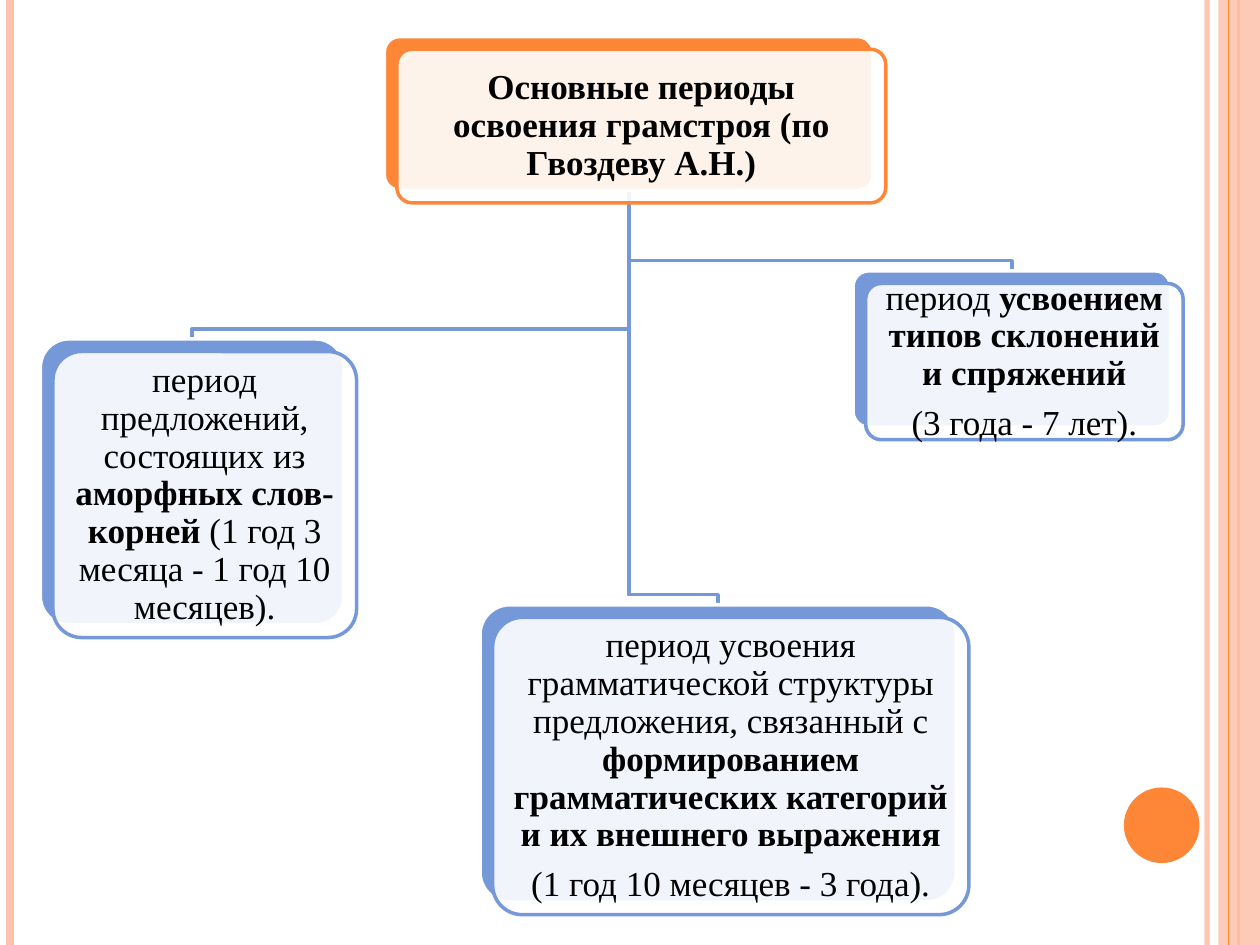
"""Build a slide with a tree of the periods of grammar acquisition."""
import pptx
import pptx.dml.color
import pptx.enum.shapes
import pptx.enum.text
import pptx.oxml
import pptx.oxml.ns
import pptx.util

Inches = pptx.util.Inches
Pt = pptx.util.Pt
SHAPE = pptx.enum.shapes.MSO_SHAPE

COLORS = {
    "orange": "FE8637",
    "peach": "FEC3AE",
    "blue": "7598D9",
    "white": "FFFFFF",
    "black": "000000",
}
CARD_SHIFT = 0.1
ELBOW_DROP = 0.08
TRUNK = (4.99, 1.51)

TITLE = ((3.05, 0.29, 3.88, 1.22),
         [[("Основные периоды освоения грамстроя (по Гвоздеву А.Н.)", True)]])
PERIODS = [
    ((0.32, 2.69, 2.41, 2.27), 0, [
        [("период предложений, состоящих из ", False),
         ("аморфных слов-корней ", True),
         ("(1 год 3 месяца - 1 год 10 месяцев).", False)],
    ]),
    ((3.81, 4.8, 3.78, 2.36), -0.33, [
        [("период усвоения грамматической структуры предложения, связанный с ", False),
         ("формированием грамматических категорий и их внешнего выражения", True)],
        [("(1 год 10 месяцев - 3 года).", False)],
    ]),
    ((6.77, 2.15, 2.52, 1.24), 0, [
        [("период ", False), ("усвоением типов склонений и спряжений", True)],
        [("(3 года - 7 лет).", False)],
    ]),
]


def rgb(name):
    """Return the named colour."""
    return pptx.dml.color.RGBColor.from_string(COLORS[name])


def set_alpha(fill_format, percent):
    """Make a solid fill partly transparent."""
    color = fill_format._xPr.find(".//" + pptx.oxml.ns.qn("a:srgbClr"))
    alpha = pptx.oxml.parse_xml(
        f'<a:alpha {pptx.oxml.ns.nsdecls("a")} val="{percent * 1000}"/>')
    color.append(alpha)


def add_line(s, x, color, width, alpha=100):
    """Draw a full-height vertical stripe."""
    sp = s.shapes.add_connector(pptx.enum.shapes.MSO_CONNECTOR.STRAIGHT,
                                Inches(x), 0, Inches(x), Inches(7.5))
    sp.line.color.rgb = rgb(color)
    sp.line.width = Pt(width)
    if alpha < 100:
        set_alpha(sp.line.fill, alpha)
    pptx.oxml.ns.qn("a:effectLst")
    sp._element.spPr.append(
        pptx.oxml.parse_xml(f'<a:effectLst {pptx.oxml.ns.nsdecls("a")}/>'))


def add_shape(s, kind, box, fill, line=None, alpha=100):
    """Add a filled preset shape without a shadow."""
    sp = s.shapes.add_shape(kind, *map(Inches, box))
    sp.shadow.inherit = False
    sp.fill.solid()
    sp.fill.fore_color.rgb = rgb(fill)
    if alpha < 100:
        set_alpha(sp.fill, alpha)
    if line:
        sp.line.color.rgb = rgb(line)
        sp.line.width = Pt(2)
    else:
        sp.line.fill.background()
    return sp


def add_text(sp, paragraphs, size=20, font="Times New Roman", color="black", last_indent=0):
    """Write centred paragraphs of (text, bold) runs into a shape."""
    tf = sp.text_frame
    tf.word_wrap = True
    tf.vertical_anchor = pptx.enum.text.MSO_ANCHOR.MIDDLE
    tf.margin_left = tf.margin_right = tf.margin_top = tf.margin_bottom = Inches(0.08)
    for i, runs in enumerate(paragraphs):
        p = tf.add_paragraph() if i else tf.paragraphs[0]
        p.alignment = pptx.enum.text.PP_ALIGN.CENTER
        p.line_spacing = 0.9
        p.space_after = Pt(0.35 * size)
        for text, bold in runs:
            r = p.add_run()
            r.text = text
            r.font.size = Pt(size)
            r.font.name = font
            r.font.bold = bold
            r.font.color.rgb = rgb(color)
    if last_indent:
        p._p.get_or_add_pPr().set("indent", str(Inches(last_indent)))


def add_card(s, box, paragraphs, color, last_indent=0):
    """Add a solid back plate and a shifted translucent card with text."""
    x, y, w, h = box
    front_box = (x + CARD_SHIFT, y + CARD_SHIFT, w, h)
    back = add_shape(s, SHAPE.ROUNDED_RECTANGLE, box, color, "white")
    front = add_shape(s, SHAPE.ROUNDED_RECTANGLE, front_box, "white", color, 90)
    for sp in (back, front):
        sp.adjustments[0] = 0.1
    add_text(front, paragraphs, last_indent=last_indent)


def add_elbow(s, box):
    """Draw the branch from the title down to the top of a card."""
    x, y, w, _ = box
    end_x, bend_y = x + w / 2, y - ELBOW_DROP
    points = [(TRUNK[0], bend_y), (end_x, bend_y), (end_x, y)]
    builder = s.shapes.build_freeform(*map(Inches, TRUNK))
    builder.add_line_segments([(Inches(px), Inches(py)) for px, py in points], close=False)
    sp = builder.convert_to_shape()
    sp.shadow.inherit = False
    sp.fill.background()
    sp.line.color.rgb = rgb("blue")
    sp.line.width = Pt(2)


def add_decoration(s):
    """Add the edge stripes and the orange dot."""
    add_line(s, 9.58, "peach", 3, 93)
    add_line(s, 0.08, "peach", 4.5)
    add_line(s, 9.83, "orange", 1.5)
    add_shape(s, SHAPE.RECTANGLE, (9.67, 0, 0.33, 7.5), "peach", alpha=87)
    add_line(s, 9.75, "orange", 0.75)
    add_shape(s, SHAPE.OVAL, (8.92, 6.25, 0.6, 0.6), "orange")


def main():
    """Build and save the slide."""
    prs = pptx.Presentation()
    prs.slide_width, prs.slide_height = Inches(10), Inches(7.5)
    s = prs.slides.add_slide(prs.slide_layouts[6])
    add_decoration(s)
    for box, _, _ in reversed(PERIODS):
        add_elbow(s, box)
    add_card(s, *TITLE, "orange")
    for box, last_indent, paragraphs in PERIODS:
        add_card(s, box, paragraphs, "blue", last_indent)
    prs.save("out.pptx")


if __name__ == "__main__":
    main()
